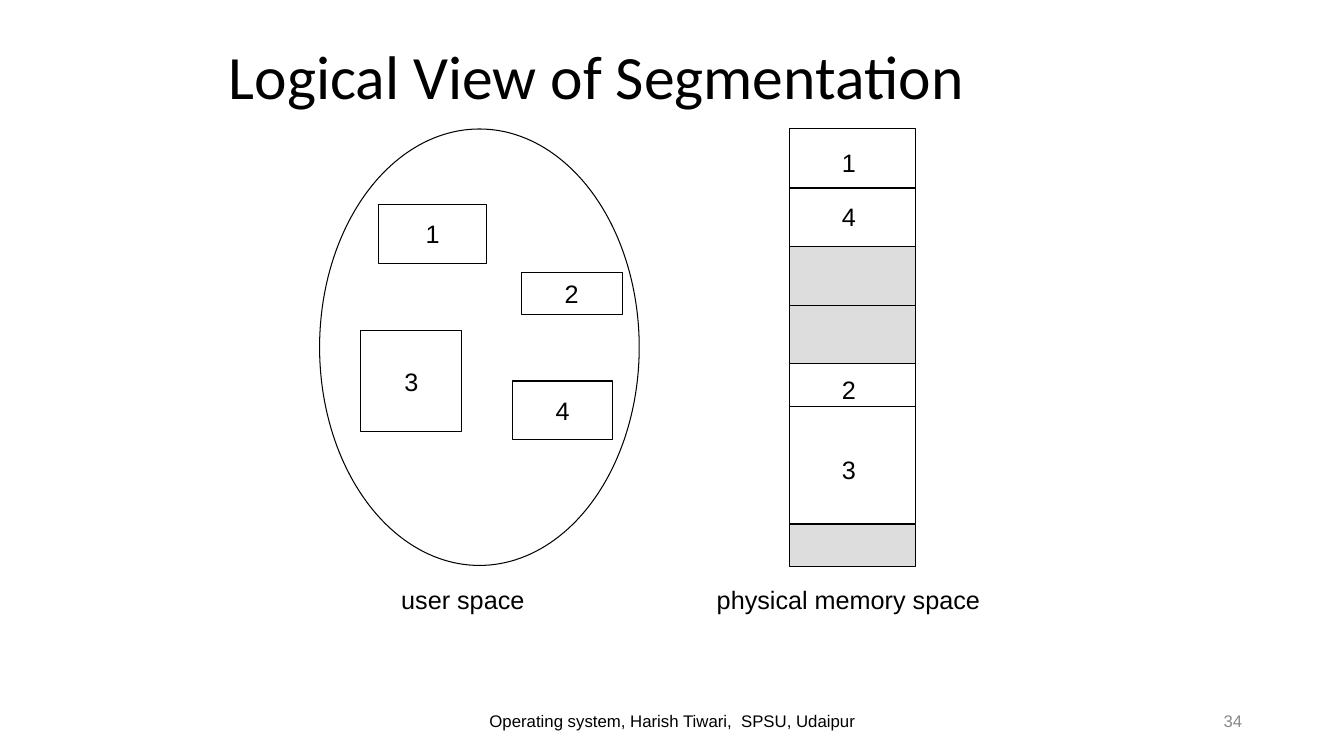
from lxml import etree
from pptx import Presentation
from pptx.dml.color import RGBColor
from pptx.enum.shapes import MSO_CONNECTOR, MSO_SHAPE
from pptx.enum.text import MSO_ANCHOR, PP_ALIGN
from pptx.oxml.ns import qn
from pptx.util import Inches, Pt

BLACK = RGBColor(0x00, 0x00, 0x00)
WHITE = RGBColor(0xFF, 0xFF, 0xFF)
FREE_GRAY = RGBColor(0xDD, 0xDD, 0xDD)
NUMBER_GRAY = RGBColor(0x89, 0x89, 0x89)


def set_text(sp, text, size=18, font="Arial", color=BLACK,
             align=PP_ALIGN.CENTER, wrap=False):
    tf = sp.text_frame
    tf.word_wrap = wrap
    tf.vertical_anchor = MSO_ANCHOR.MIDDLE
    p = tf.paragraphs[0]
    p.alignment = align
    r = p.add_run()
    r.text = text
    r.font.size = Pt(size)
    r.font.name = font
    r.font.color.rgb = color
    return p


def add_label(shapes, x, y, w, h, text, **style):
    sp = shapes.add_textbox(Inches(x), Inches(y), Inches(w), Inches(h))
    set_text(sp, text, **style)


def add_outlined(shapes, kind, x, y, w, h, fill=WHITE):
    sp = shapes.add_shape(kind, Inches(x), Inches(y), Inches(w), Inches(h))
    sp.shadow.inherit = False
    sp.fill.solid()
    sp.fill.fore_color.rgb = fill
    sp.line.color.rgb = BLACK
    sp.line.width = Pt(0.75)
    return sp


def add_divider(shapes, x, y, w):
    line = shapes.add_connector(MSO_CONNECTOR.STRAIGHT, Inches(x), Inches(y),
                                Inches(x + w), Inches(y))
    line.line.color.rgb = BLACK
    line.line.width = Pt(0.75)
    etree.SubElement(line._element.spPr, qn("a:effectLst"))
    return line


def add_title(slide, x, y, w, h):
    title = slide.shapes.title
    title.left, title.top = Inches(x), Inches(y)
    title.width, title.height = Inches(w), Inches(h)
    p = set_text(title, "Logical View of Segmentation", 44, "Calibri",
                 align=PP_ALIGN.LEFT, wrap=True)
    p.line_spacing = 0.9


def add_user_space(slide, x, y, w, h):
    shapes = slide.shapes
    add_outlined(shapes, MSO_SHAPE.OVAL, x, y, w, h)
    # Segments: number, offset from the ellipse's box, size
    for number, dx, dy, sw, sh in [
        ("1", 0.58, 0.75, 1.08, 0.58),
        ("3", 0.41, 2.0, 1.0, 1.0),
        ("2", 2.0, 1.42, 1.0, 0.42),
        ("4", 1.91, 2.5, 1.0, 0.58),
    ]:
        sp = add_outlined(shapes, MSO_SHAPE.RECTANGLE, x + dx, y + dy, sw, sh)
        set_text(sp, number)
    add_label(shapes, x + 0.71, y + h + 0.14, 1.49, 0.4, "user space ")


def add_physical_memory(slide, x, y, w, h):
    shapes = slide.shapes.add_group_shape().shapes
    # Blocks: offset from the top, height, fill, split into equal halves
    for dy, bh, fill, halved in [
        (0, 1.17, WHITE, True),
        (1.17, 1.17, FREE_GRAY, True),
        (2.33, 1.58, WHITE, False),
        (3.92, 0.42, FREE_GRAY, False),
    ]:
        block = add_outlined(shapes, MSO_SHAPE.RECTANGLE, x, y + dy, w, bh, fill)
        if halved:
            line = add_divider(shapes, x, y + dy + bh / 2, w)
            line.begin_connect(block, 1)
            line.end_connect(block, 3)
    add_divider(shapes, x, y + 2.75, w)
    # Segment numbers
    for number, dy in [("1", 0.13), ("4", 0.67), ("2", 2.38), ("3", 3.18)]:
        add_label(shapes, x + 0.42, y + dy, 0.34, 0.4, number)
    add_label(slide.shapes, x - 0.82, y + h + 0.14, 2.81, 0.4,
              "physical memory space")


def add_footer(slide, x, y, w, h):
    add_label(slide.shapes, x, y, 4.5, h,
              "Operating system, Harish Tiwari,  SPSU, Udaipur",
              size=12, wrap=True)
    add_label(slide.shapes, x + w - 3, y, 3, h, "34", size=12,
              color=NUMBER_GRAY, align=PP_ALIGN.RIGHT, wrap=True)


def main():
    prs = Presentation()
    prs.slide_width, prs.slide_height = Inches(13.33), Inches(7.5)
    slide = prs.slides.add_slide(prs.slide_layouts[5])
    add_title(slide, 2.17, 0.3, 9, 0.98)
    add_user_space(slide, 3.17, 1.28, 3.17, 4.33)
    add_physical_memory(slide, 7.83, 1.28, 1.25, 4.33)
    add_footer(slide, 4.42, 6.95, 8, 0.4)
    prs.save("out.pptx")


if __name__ == "__main__":
    main()
